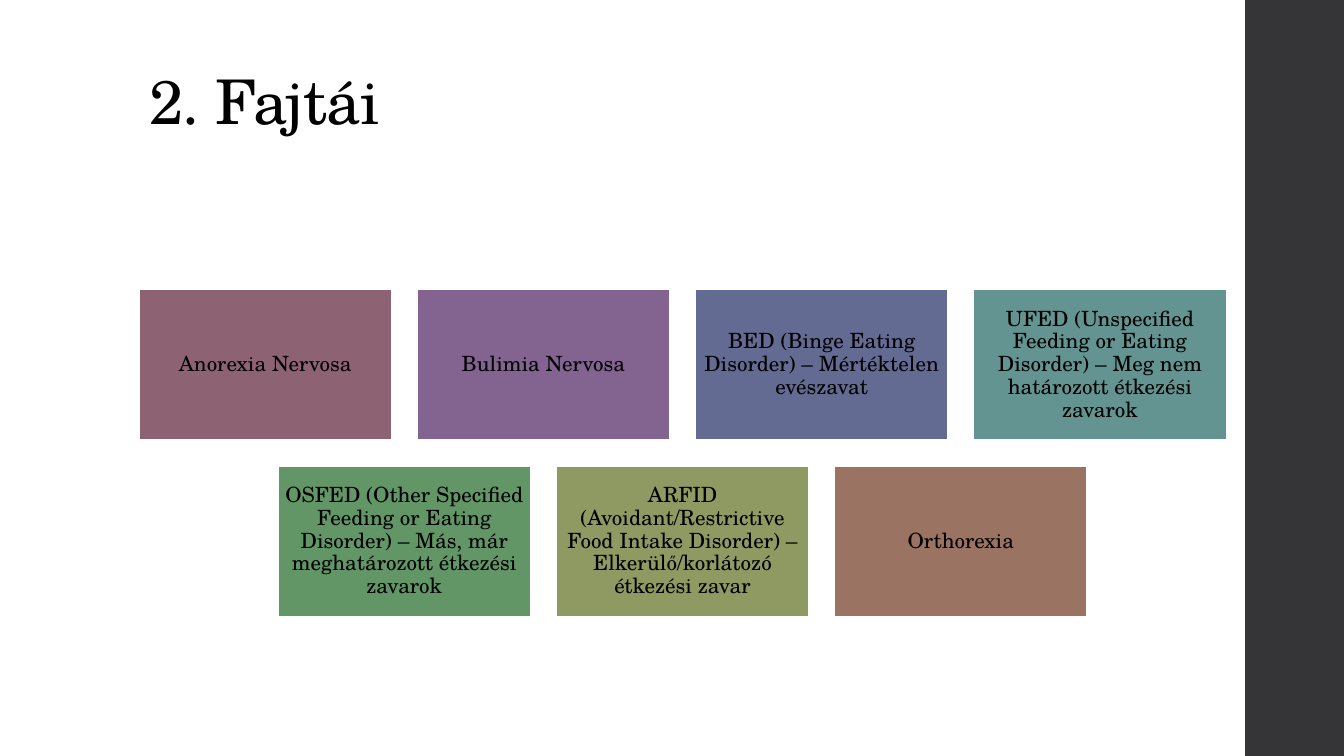
"""Build a slide listing the types of eating disorders."""
from pptx import Presentation
from pptx.dml.color import RGBColor
from pptx.enum.shapes import MSO_SHAPE
from pptx.enum.text import MSO_ANCHOR, PP_ALIGN
from pptx.util import Inches, Pt

RECTANGLE = MSO_SHAPE.RECTANGLE
MIDDLE, BOTTOM = MSO_ANCHOR.MIDDLE, MSO_ANCHOR.BOTTOM
LEFT, CENTER = PP_ALIGN.LEFT, PP_ALIGN.CENTER

TITLE = "2. Fajtái"
ROWS = [
    [
        ("Anorexia Nervosa", "rose"),
        ("Bulimia Nervosa", "purple"),
        ("BED (Binge Eating Disorder) – Mértéktelen evészavat", "blue"),
        ("UFED (Unspecified Feeding or Eating Disorder) – "
         "Meg nem határozott étkezési zavarok", "teal"),
    ],
    [
        ("OSFED (Other Specified Feeding or Eating Disorder) – "
         "Más, már meghatározott étkezési zavarok", "green"),
        ("ARFID (Avoidant/Restrictive Food Intake Disorder) – "
         "Elkerülő/korlátozó étkezési zavar", "olive"),
        ("Orthorexia", "brown"),
    ],
]
COLORS = {
    "text": "000000", "white": "FFFFFF", "band": "353537",
    "rose": "8D6374", "purple": "83638F", "blue": "636B92", "teal": "639491",
    "green": "629666", "olive": "8F9962", "brown": "9B7362",
}
FONT = "TeX Gyre Schola"
SLIDE_WIDTH, SLIDE_HEIGHT = 13.33, 7.5
GRID_CENTER, GRID_TOP = 6.77, 2.87
CARD_WIDTH, CARD_HEIGHT, GAP = 2.51, 1.5, 0.25
CARD_INSET = 0.06


def color(name):
    return RGBColor.from_string(COLORS[name])


def add_rectangle(slide, left, top, width, height, fill):
    box = slide.shapes.add_shape(
        RECTANGLE, Inches(left), Inches(top), Inches(width), Inches(height))
    box.shadow.inherit = False
    box.fill.solid()
    box.fill.fore_color.rgb = color(fill)
    box.line.fill.background()
    return box


def write(box, text, size, align, anchor):
    frame = box.text_frame
    frame.word_wrap = True
    frame.vertical_anchor = anchor
    frame.text = text
    para = frame.paragraphs[0]
    para.alignment = align
    para.line_spacing = 0.9
    span = para.runs[0]
    span.font.name = FONT
    span.font.size = Pt(size)
    span.font.color.rgb = color("text")
    return span


def add_title(slide):
    box = slide.shapes.add_textbox(
        Inches(1.38), Inches(0), Inches(10.78), Inches(1.42))
    span = write(box, TITLE, 44, LEFT, BOTTOM)
    span.font._element.set("spc", "-50")


def add_card(slide, left, top, text, fill):
    box = add_rectangle(slide, left, top, CARD_WIDTH, CARD_HEIGHT, fill)
    box.line.color.rgb = color("white")
    box.line.width = Pt(1.35)
    frame = box.text_frame
    frame.margin_left = frame.margin_right = Inches(CARD_INSET)
    frame.margin_top = frame.margin_bottom = Inches(CARD_INSET)
    write(box, text, 15, CENTER, MIDDLE)


def main():
    deck = Presentation()
    deck.slide_width = Inches(SLIDE_WIDTH)
    deck.slide_height = Inches(SLIDE_HEIGHT)
    slide = deck.slides.add_slide(deck.slide_layouts[6])
    add_rectangle(slide, 12.35, 0, SLIDE_WIDTH - 12.35, SLIDE_HEIGHT, "band")
    add_title(slide)
    for row, cards in enumerate(ROWS):
        row_width = len(cards) * (CARD_WIDTH + GAP) - GAP
        row_left = GRID_CENTER - row_width / 2
        top = GRID_TOP + row * (CARD_HEIGHT + GAP)
        for column, (text, fill) in enumerate(cards):
            left = row_left + column * (CARD_WIDTH + GAP)
            add_card(slide, left, top, text, fill)
    deck.save("out.pptx")


if __name__ == "__main__":
    main()
